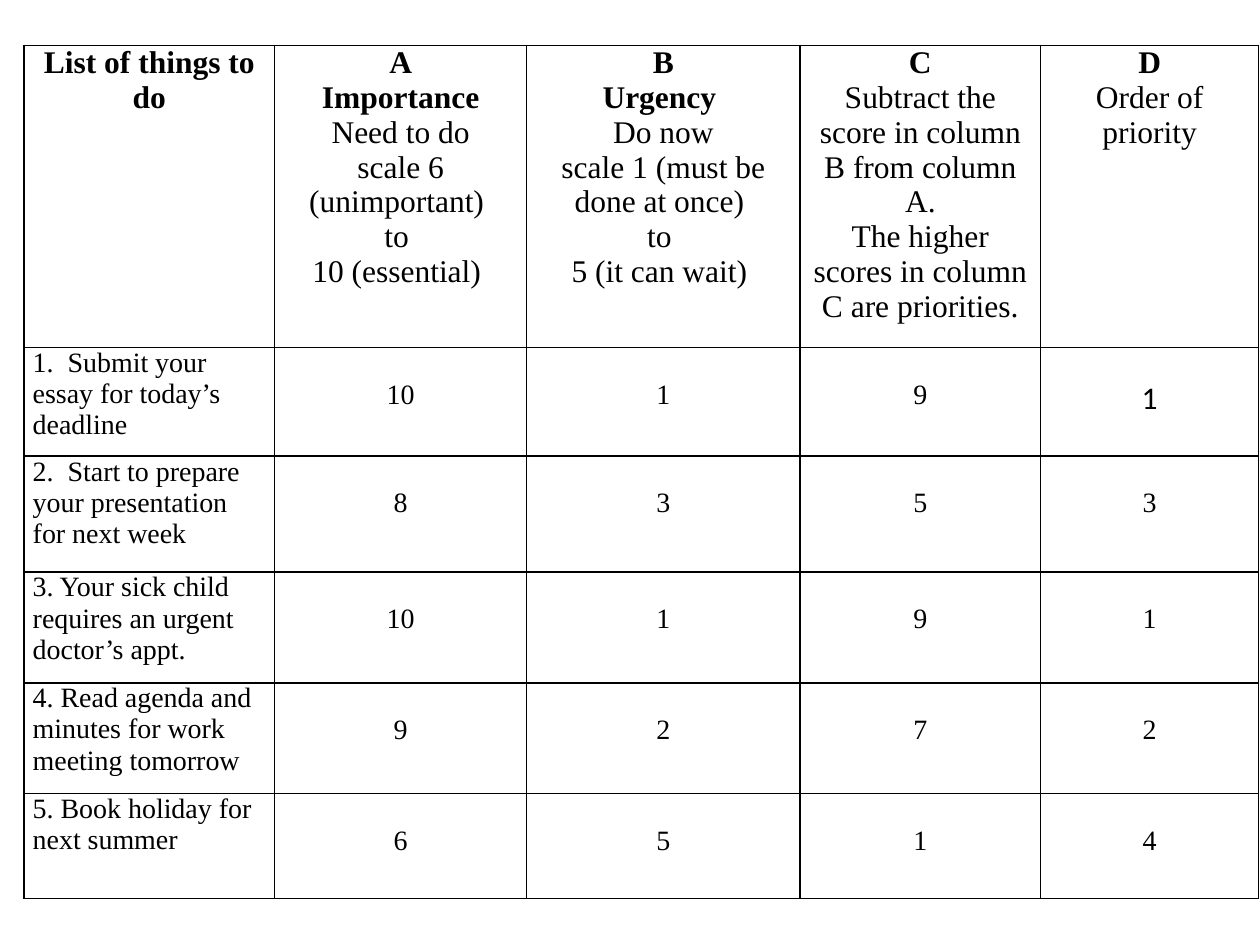
from pptx import Presentation
from pptx.dml.color import RGBColor
from pptx.enum.text import PP_ALIGN
from pptx.oxml import parse_xml
from pptx.oxml.ns import nsdecls
from pptx.util import Inches, Pt

BLACK = RGBColor(0, 0, 0)
WHITE = RGBColor(255, 255, 255)
LEFT, CENTER = PP_ALIGN.LEFT, PP_ALIGN.CENTER
SERIF, SANS = "Times New Roman", "Calibri"
HEAD_SIZE, BODY_SIZE = 18, 16
SCORE_TOP = 0.25  # one body line above each score

# Each heading: its bold lines, then its plain lines
HEADINGS = [
    (["List of things to do"], []),
    (["A", "Importance"],
     ["Need to do", "scale 6 (unimportant) ", "to ", "10 (essential) "]),
    (["B", "Urgency "],
     ["Do now", "scale 1 (must be done at once) ", "to ", "5 (it can wait) "]),
    (["C"], ["Subtract the score in column B from column A.",
             "The higher scores in column C are priorities."]),
    (["D"], ["Order of priority"]),
]
# Task, importance, urgency, order of priority
TASKS = [
    ("1.  Submit your essay for today’s deadline", 10, 1, 1),
    ("2.  Start to prepare your presentation for next week", 8, 3, 3),
    ("3. Your sick child requires an urgent doctor’s appt.", 10, 1, 1),
    ("4. Read agenda and minutes for work meeting tomorrow", 9, 2, 2),
    ("5. Book holiday for next summer", 6, 5, 4),
]
COL_WIDTHS = [1.99, 2, 2.17, 1.91, 1.73]
ROW_HEIGHTS = [2.4, 0.86, 0.92, 0.88, 0.88, 0.83]


def add_borders(cell):
    tc_pr = cell._tc.get_or_add_tcPr()
    for i, side in enumerate(("lnL", "lnR", "lnT", "lnB")):
        tc_pr.insert(i, parse_xml(
            f'<a:{side} {nsdecls("a")} w="{Pt(1)}"><a:solidFill>'
            f'<a:srgbClr val="{BLACK}"/></a:solidFill></a:{side}>'))


def write_cell(cell, lines, size, align, bold_count=0, top=0, font=SERIF):
    """Fill a cell with one paragraph per line, the first bold_count in bold."""
    cell.margin_left = cell.margin_right = Inches(0.07)
    cell.margin_top, cell.margin_bottom = Inches(top), 0
    cell.text_frame.text = "\n".join(lines)
    for i, p in enumerate(cell.text_frame.paragraphs):
        p.alignment = align
        for r in p.runs:
            r.font.name, r.font.size = font, Pt(size)
            r.font.bold = i < bold_count
            r.font.color.rgb = BLACK
    cell.fill.solid()
    cell.fill.fore_color.rgb = WHITE
    add_borders(cell)


prs = Presentation()
prs.slide_width, prs.slide_height = Inches(10), Inches(7.5)
s = prs.slides.add_slide(prs.slide_layouts[6])

table = s.shapes.add_table(
    len(ROW_HEIGHTS), len(COL_WIDTHS), Inches(0.19), Inches(0.36),
    Inches(sum(COL_WIDTHS)), Inches(sum(ROW_HEIGHTS))).table
table.horz_banding = False
for column, width in zip(table.columns, COL_WIDTHS):
    column.width = Inches(width)
for row, height in zip(table.rows, ROW_HEIGHTS):
    row.height = Inches(height)

for col, (bold, plain) in enumerate(HEADINGS):
    write_cell(table.cell(0, col), bold + plain, HEAD_SIZE, CENTER, len(bold))

for row, (task, importance, urgency, order) in enumerate(TASKS, start=1):
    write_cell(table.cell(row, 0), [task], BODY_SIZE, LEFT)
    scores = (importance, urgency, importance - urgency, order)
    for col, score in enumerate(scores, start=1):
        # The first order of priority is set larger, in the sans font
        first_order = row == 1 and col == len(scores)
        write_cell(table.cell(row, col), [str(score)],
                   HEAD_SIZE if first_order else BODY_SIZE, CENTER,
                   top=SCORE_TOP, font=SANS if first_order else SERIF)

prs.save("out.pptx")
